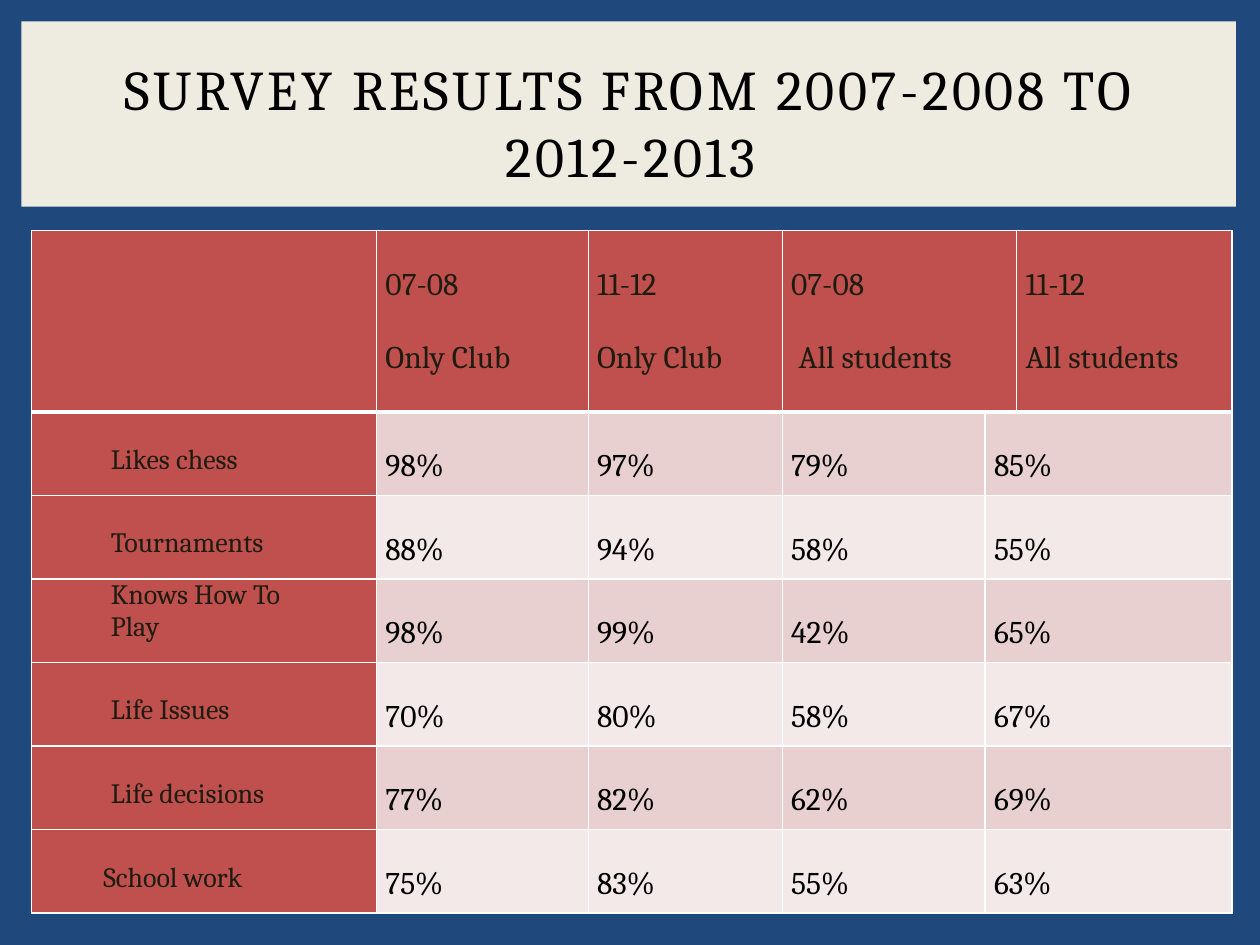
import pptx
import pptx.util
from lxml import etree
from pptx.dml.color import RGBColor
from pptx.enum.shapes import MSO_SHAPE
from pptx.enum.text import MSO_ANCHOR, PP_ALIGN
from pptx.oxml.ns import qn
from pptx.util import Inches, Pt

# Content
TITLE = "SURVEY RESULTS FROM 2007-2008 TO 2012-2013"
HEADERS = [
    ("07-08", "Only Club"),
    ("11-12", "Only Club"),
    ("07-08", "All students"),
    ("11-12", "All students"),
]
RESULTS = [
    (["Likes chess"], ["98%", "97%", "79%", "85%"]),
    (["Tournaments"], ["88%", "94%", "58%", "55%"]),
    (["Knows How To", "Play"], ["98%", "99%", "42%", "65%"]),
    (["Life Issues"], ["70%", "80%", "58%", "67%"]),
    (["Life decisions"], ["77%", "82%", "62%", "69%"]),
    (["School work"], ["75%", "83%", "55%", "63%"]),
]

# Layout and colours
FONT = "Cambria"
NAVY, CREAM, RED, INK = "1F497D", "EEECE1", "C0504D", "1E1C11"
BLACK, WHITE = "000000", "FFFFFF"
BANDS = ["E8D0D0", "F4E9E9"]
COL_WIDTHS = [2.74, 1.68, 1.54, 1.61, 0.25, 1.71]
TABLE_HEIGHT, HEADER_HEIGHT = 5.42, 1.44
HEADER_COLS = [1, 2, 3, 5]  # the third heading spans columns 3 and 4
VALUE_COLS = [1, 2, 3, 4]   # the last value spans columns 4 and 5


def color(hex_value):
    return RGBColor.from_string(hex_value)


def fill(target, hex_value):
    target.fill.solid()
    target.fill.fore_color.rgb = color(hex_value)


def style(p, size, hex_value):
    p.font.name = FONT
    p.font.size = Pt(size)
    p.font.color.rgb = color(hex_value)


def border(cell, bottom=1):
    tc_pr = cell._tc.get_or_add_tcPr()
    sides = [("lnL", 1), ("lnR", 1), ("lnT", 1), ("lnB", bottom)]
    for i, (side, width) in enumerate(sides):
        ln = etree.Element(qn("a:" + side), w=str(Pt(width)))
        solid = etree.SubElement(ln, qn("a:solidFill"))
        etree.SubElement(solid, qn("a:srgbClr"), val=WHITE)
        tc_pr.insert(i, ln)


def write(cell, lines, size, hex_value, spacing=2.0, indents=None):
    tf = cell.text_frame
    for i, line in enumerate(lines):
        p = tf.paragraphs[0] if i == 0 else tf.add_paragraph()
        p.text = line
        p.line_spacing = spacing
        style(p, size, hex_value)
        if indents:
            p._p.get_or_add_pPr().set("marL", "0")
            p._p.get_or_add_pPr().set("indent", str(Inches(indents[i])))


prs = pptx.Presentation()
prs.slide_width, prs.slide_height = Inches(10), Inches(7.5)
s = prs.slides.add_slide(prs.slide_layouts[5])
fill(s.background, NAVY)

# Title panel, placed behind the title
panel = s.shapes.add_shape(MSO_SHAPE.RECTANGLE, Inches(0.17), Inches(0.17),
                           Inches(9.64), Inches(1.47))
panel.shadow.inherit = False
fill(panel, CREAM)
panel.line.fill.background()
s.shapes._spTree.insert(2, panel._element)

# Title
title = s.shapes.title
title.left, title.top = Inches(0.42), Inches(0.39)
title.width, title.height = Inches(9.17), Inches(1.15)
title.text_frame.text = TITLE
title.text_frame.word_wrap = True
title.text_frame.vertical_anchor = MSO_ANCHOR.MIDDLE
p = title.text_frame.paragraphs[0]
p.alignment = PP_ALIGN.CENTER
style(p, 32, BLACK)
p.runs[0].font._element.set("spc", "200")

# Table grid
table = s.shapes.add_table(len(RESULTS) + 1, len(COL_WIDTHS), Inches(0.25), Inches(1.83),
                           Inches(sum(COL_WIDTHS)), Inches(TABLE_HEIGHT)).table
table.first_row = table.horz_banding = False
for col, width in zip(table.columns, COL_WIDTHS):
    col.width = Inches(width)
for r, row in enumerate(table.rows):
    row.height = Inches(HEADER_HEIGHT if r == 0
                        else (TABLE_HEIGHT - HEADER_HEIGHT) / len(RESULTS))
    for c, cell in enumerate(row.cells):
        fill(cell, RED if r == 0 or c == 0 else BANDS[(r - 1) % 2])
        border(cell, 3 if r == 0 else 1)
        cell.margin_left = cell.margin_right = Inches(0.07)
        cell.margin_top = cell.margin_bottom = 0
    first = 3 if r == 0 else 4
    table.cell(r, first).merge(table.cell(r, first + 1))

# Column headings
for i, (c, lines) in enumerate(zip(HEADER_COLS, HEADERS)):
    write(table.cell(0, c), lines, 18, INK, indents=(0, 0.06) if i == 2 else None)

# Survey rows
for r, (label, values) in enumerate(RESULTS, start=1):
    indent = 0.5 if r == len(RESULTS) else 0.56
    cell = table.cell(r, 0)
    write(cell, label, 16, INK, 2.0 if len(label) == 1 else 1.0, [indent] * len(label))
    for p in cell.text_frame.paragraphs:
        p.alignment = PP_ALIGN.JUSTIFY
    for c, value in zip(VALUE_COLS, values):
        write(table.cell(r, c), [value], 18, BLACK)

prs.save("out.pptx")
